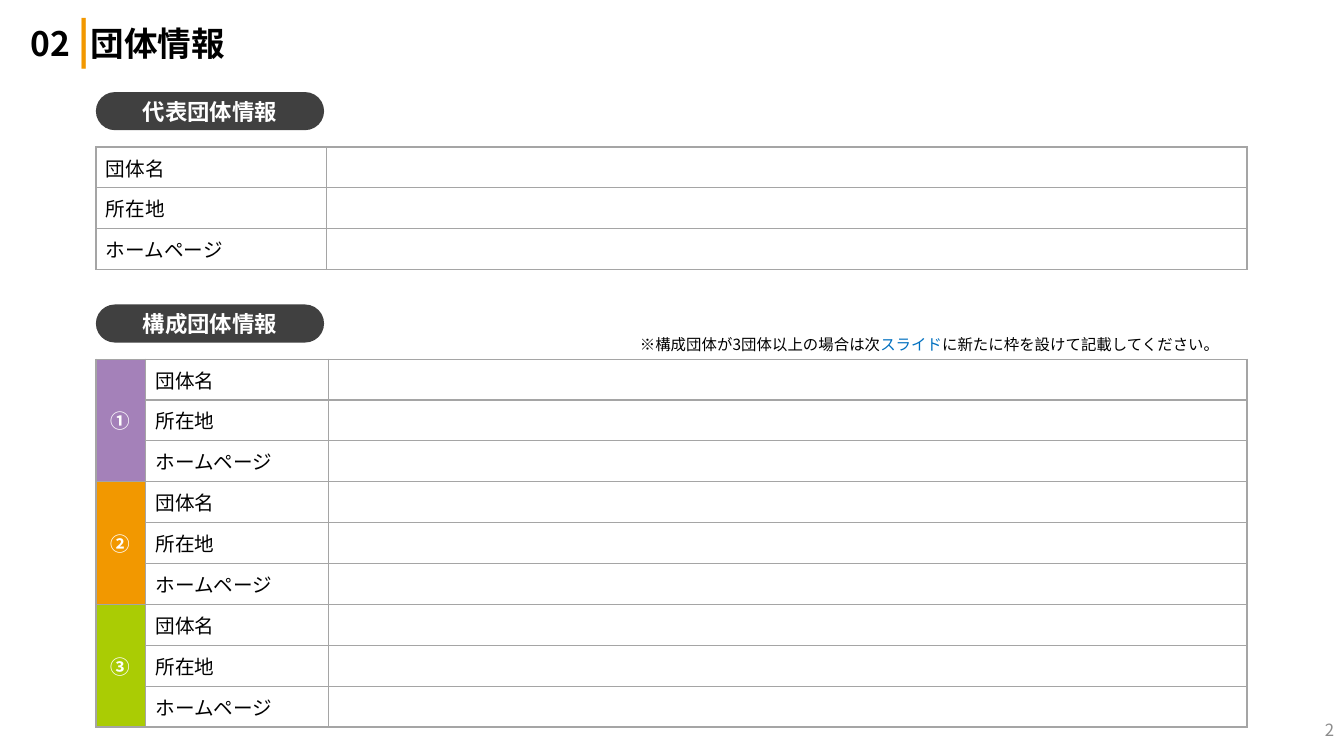
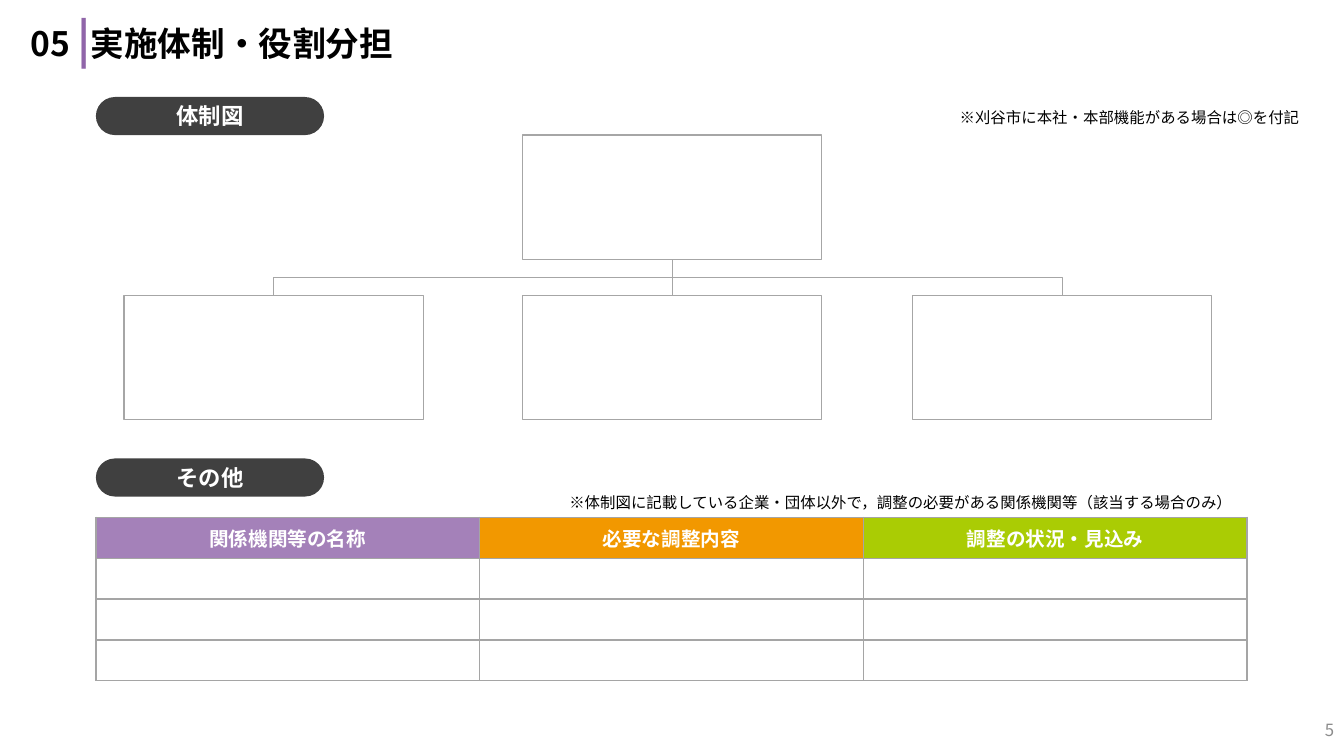
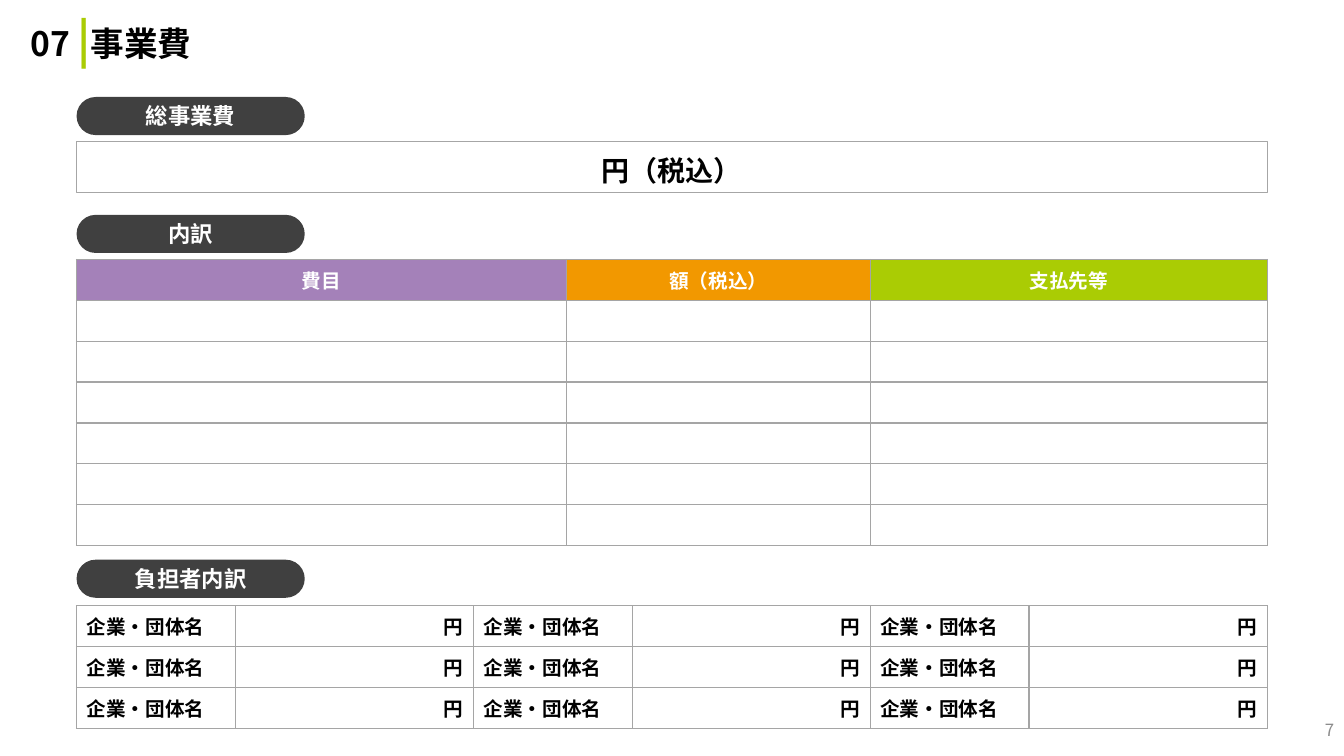
from lxml import etree
from pptx import Presentation
from pptx import util as u
from pptx.dml.color import RGBColor
from pptx.enum import shapes, text
from pptx.oxml import ns

hue = RGBColor.from_string
FONT = "Noto Sans CJK JP"
BLACK, WHITE, DARK, GREY, LINE = "000000", "FFFFFF", "404040", "8C8C8C", "A6A6A6"
PURPLE, ORANGE, GREEN = "A481B9", "F29800", "AACC04"
RULE = "A5A5A5"
LEFT, MID, RIGHT = text.PP_ALIGN.LEFT, text.PP_ALIGN.CENTER, text.PP_ALIGN.RIGHT
CENTRE = text.MSO_ANCHOR.MIDDLE
ROW = 29.2

# Cell styles: text colour, bold, alignment, fill
PLAIN = (BLACK, False, LEFT, None)
NAME = (BLACK, True, LEFT, None)
YEN = (BLACK, True, RIGHT, None)
HEADS = [(WHITE, True, MID, fill) for fill in (PURPLE, ORANGE, GREEN)]
BLANK = ("", PLAIN)


def write(frame, runs, bold=False, align=LEFT, lead=None, after=None):
    """Fill the first paragraph with runs of (text, size, colour)."""
    para = frame.paragraphs[0]
    para.alignment = align
    if lead:
        para.line_spacing = lead
    if after:
        para.space_after = u.Pt(after)
    for words, size, colour in runs:
        run = para.add_run()
        run.text = words
        run.font.size = u.Pt(size)
        run.font.bold = bold
        run.font.name = FONT
        run.font.color.rgb = hue(colour)
        east = etree.SubElement(run.font._element, ns.qn("a:ea"))
        east.set("typeface", FONT)


def grid(slide, left, top, widths, rows):
    """Draw a ruled table from rows of (text, style) cells."""
    frame = slide.shapes.add_table(len(rows), len(widths), u.Pt(left), u.Pt(top),
                                   u.Pt(sum(widths)), u.Pt(ROW * len(rows)))
    table = frame.table
    table.first_row = table.horz_banding = False
    for col, width in zip(table.columns, widths):
        col.width = u.Pt(width)
    for r, row in enumerate(rows):
        table.rows[r].height = u.Pt(ROW)
        for c, (words, (colour, bold, align, fill)) in enumerate(row):
            cell = table.cell(r, c)
            cell.vertical_anchor = CENTRE
            cell.margin_top = cell.margin_bottom = 0
            props = cell._tc.get_or_add_tcPr()
            for side in ("lnL", "lnR", "lnT", "lnB"):
                edge = etree.SubElement(props, ns.qn("a:" + side), w="12700")
                solid = etree.SubElement(edge, ns.qn("a:solidFill"))
                etree.SubElement(solid, ns.qn("a:srgbClr"), val=RULE)
            if fill:
                cell.fill.solid()
                cell.fill.fore_color.rgb = hue(fill)
            else:
                cell.fill.background()
            if words:
                write(cell.text_frame, [(words, 14, colour)], bold, align)
    return table


# Number, title, bar colour, page, badge left, badges (text, top),
# notes (left, top, width, alignment, runs of text and colour)
pages = [
    ("02", "団体情報", ORANGE, "2", 68.5,
     [("代表団体情報", 65.8), ("構成団体情報", 217.5)],
     [(450, 233.3, 433.5, LEFT, [("※構成団体が3団体以上の場合は次", BLACK),
                                 ("スライド", "0070C0"),
                                 ("に新たに枠を設けて記載してください。", BLACK)])]),
    ("05", "実施体制・役割分担", "9065A9", "5", 68.5,
     [("体制図", 69.3), ("その他", 327.5)],
     [(674, 71.3, 261.4, RIGHT, [("※刈谷市に本社・本部機能がある場合は◎を付記", BLACK)]),
      (399.6, 346.3, 491.8, LEFT,
       [("※体制図に記載している企業・団体以外で，調整の必要がある関係機関等（該当する場合のみ）", BLACK)])]),
    ("07", "事業費", GREEN, "7", 54.7,
     [("総事業費", 69.3), ("内訳", 153.5), ("負担者内訳", 399.8)], []),
]

deck = Presentation()
deck.slide_width, deck.slide_height = u.Pt(960), u.Pt(540)
slides = []
for number, name, bar, page, left, badges, notes in pages:
    slide = deck.slides.add_slide(deck.slide_layouts[5])
    slides.append(slide)

    title = slide.shapes.title
    title.left, title.top = u.Pt(14.4), u.Pt(6.5)
    title.width, title.height = u.Pt(785), u.Pt(47.5)
    title.text_frame.auto_size = text.MSO_AUTO_SIZE.NONE
    title.text_frame.vertical_anchor = CENTRE
    write(title.text_frame, [(number + " ", 24, BLACK), ("|", 32, bar), (name, 24, BLACK)],
          True, lead=0.9)

    for words, top in badges:
        badge = slide.shapes.add_shape(shapes.MSO_SHAPE.ROUNDED_RECTANGLE, u.Pt(left),
                                       u.Pt(top), u.Pt(163), u.Pt(27.2))
        badge.adjustments[0] = 0.5
        badge.shadow.inherit = False
        badge.fill.solid()
        badge.fill.fore_color.rgb = hue(DARK)
        badge.line.fill.background()
        badge.text_frame.vertical_anchor = CENTRE
        write(badge.text_frame, [(words, 16, WHITE)], True, MID)

    for x, y, width, align, parts in notes:
        note = slide.shapes.add_textbox(u.Pt(x), u.Pt(y), u.Pt(width), u.Pt(23.2))
        note.text_frame.word_wrap = True
        note.text_frame.auto_size = text.MSO_AUTO_SIZE.SHAPE_TO_FIT_TEXT
        write(note.text_frame, [(words, 11, colour) for words, colour in parts],
              align=align, lead=1.2, after=6)

    foot = slide.shapes.add_textbox(u.Pt(744), u.Pt(512), u.Pt(216), u.Pt(18))
    foot.text_frame.word_wrap = True
    foot.text_frame.vertical_anchor = CENTRE
    write(foot.text_frame, [(page, 12, GREY)], align=RIGHT)

group, team, cost = slides

# Group details
labels = [(words, PLAIN) for words in ("団体名", "所在地", "ホームページ")]
grid(group, 68.5, 105, [165, 657.3], [[label, BLANK] for label in labels])
members = grid(group, 68.5, 256.5, [35.3, 131, 656],
               [[(mark if label is labels[0] else "", head), label, BLANK]
                for mark, head in zip("①②③", HEADS) for label in labels])
for r in range(0, 9, 3):
    members.cell(r, 0).merge(members.cell(r + 2, 0))

# Team chart
WIDE, HIGH, TOP, LOW, TRUNK = 214, 88.8, 96.5, 211, 480
GAP = LOW - TOP - HIGH
centres = [195.6, TRUNK, 758.6]
for centre, top in [(TRUNK, TOP)] + [(centre, LOW) for centre in centres]:
    box = team.shapes.add_shape(shapes.MSO_SHAPE.RECTANGLE, u.Pt(centre - WIDE / 2),
                                u.Pt(top), u.Pt(WIDE), u.Pt(HIGH))
    box.shadow.inherit = False
    box.fill.background()
    box.line.color.rgb = hue(LINE)
    box.line.width = u.Pt(1)

# Elbows are laid out upright, then turned so that they leave the top box downwards
for centre, turn in zip(centres, (90, 0, 270)):
    x, y = (TRUNK + centre) / 2, LOW - GAP / 2
    if turn:
        kind, span = shapes.MSO_CONNECTOR.ELBOW, abs(centre - TRUNK)
        half = GAP / 2 if turn == 270 else -GAP / 2
    else:
        kind, span, half = shapes.MSO_CONNECTOR.STRAIGHT, GAP, 0
    link = team.shapes.add_connector(kind, u.Pt(x + half), u.Pt(y - span / 2),
                                     u.Pt(x - half), u.Pt(y + span / 2))
    link.line.color.rgb = hue(LINE)
    link.line.width = u.Pt(0.5)
    props = link._element.spPr
    etree.SubElement(props, ns.qn("a:effectLst"))
    if turn:
        props.find(ns.qn("a:xfrm")).set("rot", str(turn * 60000))

heads = zip(("関係機関等の名称", "必要な調整内容", "調整の状況・見込み"), HEADS)
grid(team, 68.5, 369.5, [274.1] * 3, [list(heads)] + [[BLANK] * 3] * 3)

# Project cost
total = cost.shapes.add_shape(shapes.MSO_SHAPE.RECTANGLE, u.Pt(54.7), u.Pt(101.2),
                              u.Pt(850.5), u.Pt(36.2))
total.shadow.inherit = False
total.fill.background()
total.line.color.rgb = hue(LINE)
total.line.width = u.Pt(0.75)
total.text_frame.vertical_anchor = text.MSO_ANCHOR.TOP
total.text_frame.auto_size = text.MSO_AUTO_SIZE.SHAPE_TO_FIT_TEXT
write(total.text_frame, [("円（税込）", 20, BLACK)], True, MID, 1.2, 6)

heads = zip(("費目", "額（税込）", "支払先等"), HEADS)
grid(cost, 54.7, 185.3, [350, 217, 283.5], [list(heads)] + [[BLANK] * 3] * 6)
grid(cost, 54.7, 432.7, [113.4, 170.1] * 3, [[("企業・団体名", NAME), ("円", YEN)] * 3] * 3)

deck.save("out.pptx")
